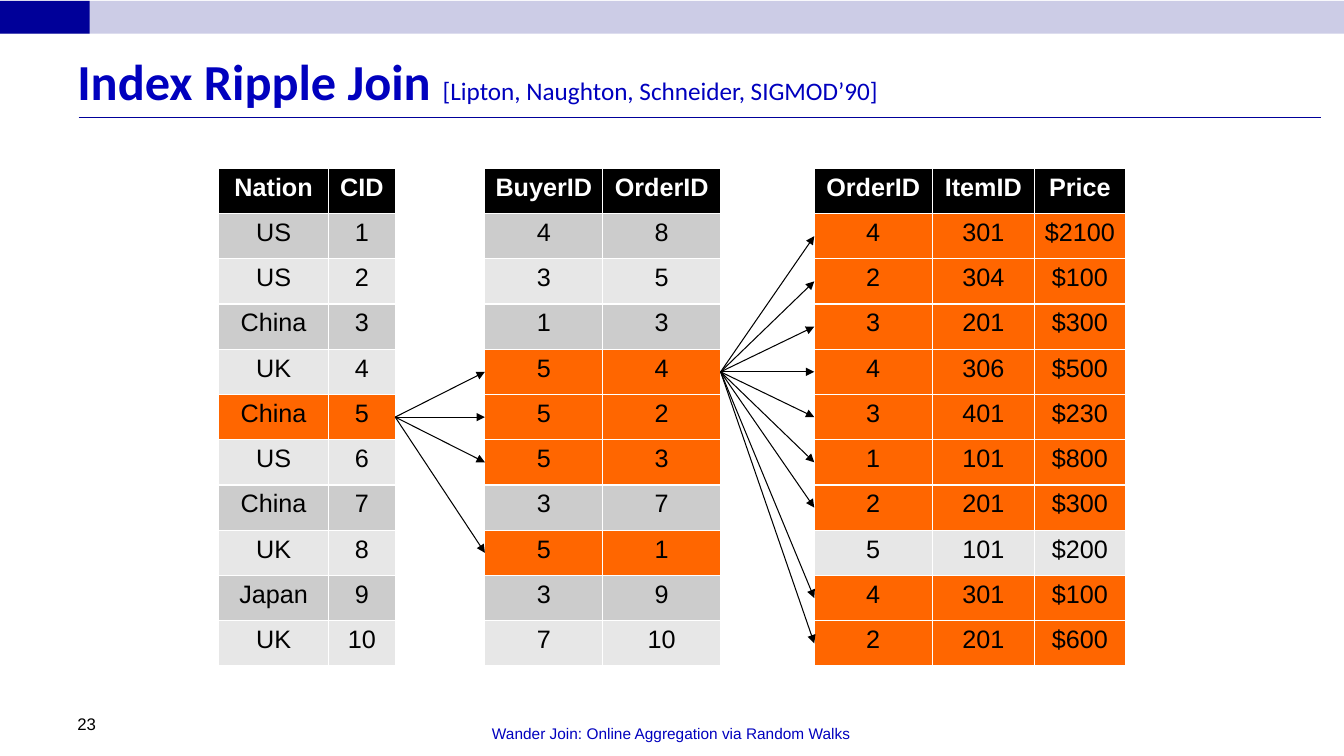
"""Build the Index Ripple Join slide: three tables linked by fans of arrows."""
from lxml import etree
from pptx import Presentation
from pptx.dml.color import RGBColor
from pptx.enum import shapes, text
from pptx.oxml import ns
from pptx.util import Cm, Pt

BLACK = RGBColor(0, 0, 0)
WHITE = RGBColor(255, 255, 255)
NAVY = RGBColor(0, 0, 0x99)
LAVENDER = RGBColor(0xCC, 0xCC, 0xE6)
BLUE = RGBColor(0, 0, 0xBE)
ORANGE = RGBColor(0xFF, 0x66, 0)
GREYS = (RGBColor(0xE7, 0xE7, 0xE7), RGBColor(0xCC, 0xCC, 0xCC))

TITLE = [("Index Ripple Join ", 36, True),
         ("[Lipton, Naughton, Schneider, SIGMOD’90]", 18, False)]
FOOTER = [("Wander Join: Online Aggregation via Random Walks", 11, False)]
PAGE = [("23", 12, False)]

RELATIONS = [
    {"left": 5.51, "widths": (2.77, 1.68), "joined": (5,), "rows": [
        ("Nation", "CID"), ("US", "1"), ("US", "2"), ("China", "3"), ("UK", "4"),
        ("China", "5"), ("US", "6"), ("China", "7"), ("UK", "8"), ("Japan", "9"),
        ("UK", "10")]},
    {"left": 12.22, "widths": (2.97, 2.97), "joined": (4, 5, 6, 8), "rows": [
        ("BuyerID", "OrderID"), ("4", "8"), ("3", "5"), ("1", "3"), ("5", "4"),
        ("5", "2"), ("5", "3"), ("3", "7"), ("5", "1"), ("3", "9"), ("7", "10")]},
    {"left": 20.52, "widths": (2.97, 2.58, 2.29),
     "joined": (1, 2, 3, 4, 5, 6, 7, 9, 10), "rows": [
        ("OrderID", "ItemID", "Price"), ("4", "301", "$2100"), ("2", "304", "$100"),
        ("3", "201", "$300"), ("4", "306", "$500"), ("3", "401", "$230"),
        ("1", "101", "$800"), ("2", "201", "$300"), ("5", "101", "$200"),
        ("4", "301", "$100"), ("2", "201", "$600")]},
]
TABLE_TOP, ROW_HEIGHT = 4.24, 1.14


def add_band(slide, width, color):
    band = slide.shapes.add_shape(shapes.MSO_SHAPE.RECTANGLE, 0, Cm(0.02), Cm(width), Cm(0.83))
    band.shadow.inherit = False
    band.fill.solid()
    band.fill.fore_color.rgb = color
    band.line.fill.background()


def add_line(slide, start, end, color, arrow=False):
    line = slide.shapes.add_connector(
        shapes.MSO_CONNECTOR.STRAIGHT, *(Cm(value) for value in start + end))
    line.line.color.rgb = color
    line.line.width = Pt(0.75)
    if arrow:
        etree.SubElement(line.line._get_or_add_ln(), ns.qn("a:tailEnd"), type="triangle")
    etree.SubElement(line._element.spPr, ns.qn("a:effectLst"))


def add_label(slide, box, pieces, font, color, anchor, align=text.PP_ALIGN.LEFT):
    frame = slide.shapes.add_textbox(*(Cm(value) for value in box)).text_frame
    frame.word_wrap = True
    frame.vertical_anchor = anchor
    paragraph = frame.paragraphs[0]
    paragraph.alignment = align
    for words, size, bold in pieces:
        run = paragraph.add_run()
        run.text = words
        run.font.name = font
        run.font.size = Pt(size)
        run.font.bold = bold
        run.font.color.rgb = color


def add_relation(slide, relation):
    rows, widths = relation["rows"], relation["widths"]
    table = slide.shapes.add_table(
        len(rows), len(widths), Cm(relation["left"]), Cm(TABLE_TOP),
        Cm(sum(widths)), Cm(ROW_HEIGHT * len(rows))).table
    for column, width in zip(table.columns, widths):
        column.width = Cm(width)
    for number, values in enumerate(rows):
        header = number == 0
        fill = BLACK if header else ORANGE if number in relation["joined"] else GREYS[number % 2]
        for cell, value in zip(table.rows[number].cells, values):
            cell.fill.solid()
            cell.fill.fore_color.rgb = fill
            cell.text_frame.text = value
            paragraph = cell.text_frame.paragraphs[0]
            paragraph.alignment = text.PP_ALIGN.CENTER
            font = paragraph.runs[0].font
            font.name = "Arial"
            font.size = Pt(18)
            font.bold = header
            font.color.rgb = WHITE if header else BLACK


def add_fan(slide, source, target):
    def row_middle(number):
        return TABLE_TOP + (number + 0.5) * ROW_HEIGHT

    start = (source["left"] + sum(source["widths"]), row_middle(source["joined"][0]))
    for number in target["joined"]:
        add_line(slide, start, (target["left"], row_middle(number)), BLACK, arrow=True)


def main():
    deck = Presentation()
    deck.slide_width, deck.slide_height = Cm(33.87), Cm(19.05)
    slide = deck.slides.add_slide(deck.slide_layouts[6])
    add_band(slide, 33.87, LAVENDER)
    add_band(slide, 2.26, NAVY)
    add_line(slide, (1.98, 2.97), (33.3, 2.97), NAVY)
    add_label(slide, (1.7, 0.85, 32.17, 2.33), TITLE, "Calibri", BLUE, text.MSO_ANCHOR.MIDDLE)
    add_label(slide, (8.74, 17.57, 16.36, 1.27), FOOTER, "Arial", BLUE,
              text.MSO_ANCHOR.BOTTOM, text.PP_ALIGN.CENTER)
    add_label(slide, (1.7, 17.36, 7.9, 1.27), PAGE, "Arial", BLACK, text.MSO_ANCHOR.BOTTOM)
    for relation in RELATIONS:
        add_relation(slide, relation)
    for source, target in zip(RELATIONS, RELATIONS[1:]):
        add_fan(slide, source, target)
    deck.save("out.pptx")


if __name__ == "__main__":
    main()
